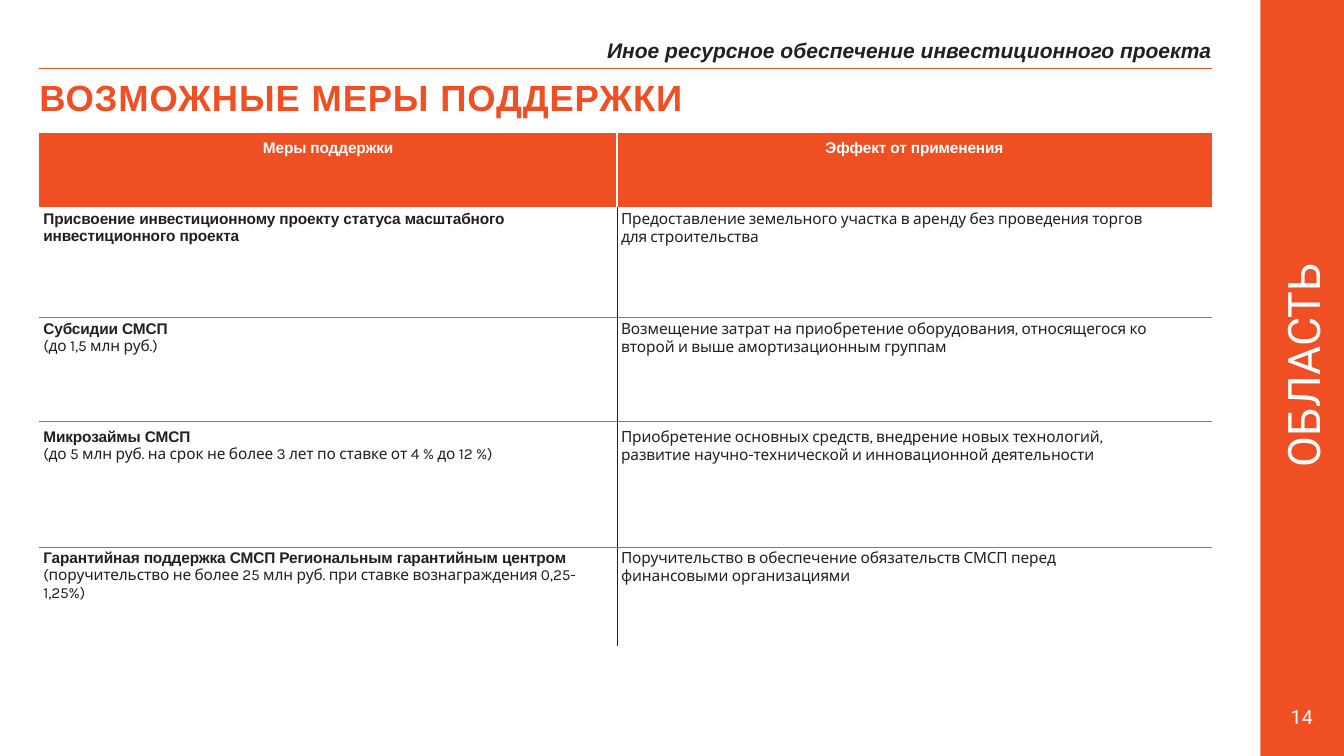
from dataclasses import dataclass

import pptx
import pptx.dml.color
import pptx.enum.shapes
import pptx.enum.text
import pptx.oxml
import pptx.oxml.ns
import pptx.util

# Content
TITLE = "ВОЗМОЖНЫЕ МЕРЫ ПОДДЕРЖКИ"
SECTION = "Иное ресурсное обеспечение инвестиционного проекта"
SIDE_LABEL = "ОБЛАСТЬ"
PAGE_NUMBER = "14"
HEADERS = ("Меры поддержки", "Эффект от применения")
# (measure, terms, effect)
MEASURES = [
    ("Присвоение инвестиционному проекту статуса масштабного инвестиционного проекта",
     "",
     "Предоставление земельного участка в аренду без проведения торгов для строительства"),
    ("Субсидии СМСП",
     "(до 1,5 млн руб.)",
     "Возмещение затрат на приобретение оборудования, относящегося ко второй и выше "
     "амортизационным группам"),
    ("Микрозаймы СМСП",
     "(до 5 млн руб. на срок не более 3 лет по ставке от 4 % до 12 %)",
     "Приобретение основных средств, внедрение новых технологий, развитие "
     "научно-технической и инновационной деятельности"),
    ("Гарантийная поддержка СМСП Региональным гарантийным центром",
     "(поручительство не более 25 млн руб. при ставке вознаграждения 0,25-1,25%)",
     "Поручительство в обеспечение обязательств СМСП перед финансовыми организациями"),
]


@dataclass(frozen=True)
class Theme:
    accent: str = "F04E23"
    ink: str = "231F20"
    white: str = "FFFFFF"
    heading_font: str = "Arial"
    body_font: str = "Karla"
    label_font: str = "Roboto"
    title_size: float = 26
    section_size: float = 15
    table_size: float = 11
    side_size: float = 32
    number_size: float = 14


THEME = Theme()

# Grid, in inches
SLIDE_WIDTH, SLIDE_HEIGHT = 13.33, 7.5
LEFT = 0.39
SIDEBAR_LEFT = 12.5
SIDEBAR_WIDTH = SLIDE_WIDTH - SIDEBAR_LEFT
RULE_TOP = 0.68
TABLE_TOP = 1.32
COLUMNS = (5.73, 5.9)
ROWS = (0.73, 1.1, 1.03, 1.25, 0.98)
TOP_INSETS = (0.06, 0.04, 0.03, 0.07, 0.02)
RIGHT = LEFT + sum(COLUMNS)
TEXT_INDENT = 0.04
EFFECT_RIGHT_INSET = 0.55

inches = pptx.util.Inches
ALIGN = pptx.enum.text.PP_ALIGN
ANCHOR = pptx.enum.text.MSO_ANCHOR


def color(value):
    return pptx.dml.color.RGBColor.from_string(value)


def add_run(paragraph, text, font, size, ink, bold=False, italic=False, spacing=0):
    run = paragraph.add_run()
    run.text = text
    run.font.name = font
    run.font.size = pptx.util.Pt(size)
    run.font.bold = bold
    run.font.italic = italic
    run.font.color.rgb = color(ink)
    if spacing:
        run.font._element.set("spc", str(round(spacing * 100)))


def prepare_frame(shape, inset=0.01, anchor=ANCHOR.TOP, align=ALIGN.LEFT):
    frame = shape.text_frame
    frame.word_wrap = True
    frame.auto_size = pptx.enum.text.MSO_AUTO_SIZE.NONE
    frame.margin_left = frame.margin_right = frame.margin_bottom = 0
    frame.margin_top = inches(inset)
    frame.vertical_anchor = anchor
    frame.paragraphs[0].alignment = align
    return frame.paragraphs[0]


def add_text_box(slide, left, top, width, height, **layout):
    box = slide.shapes.add_textbox(*map(inches, (left, top, width, height)))
    return box, prepare_frame(box, **layout)


def set_borders(cell, **sides):
    """Draw the named sides (L, R, T, B) as (colour, points); clear the others."""
    properties = cell._tc.get_or_add_tcPr()
    for side in "LRTB":
        ink, points = sides.get(side, (None, 0))
        fill = f'<a:solidFill><a:srgbClr val="{ink}"/></a:solidFill>' if ink else "<a:noFill/>"
        properties.append(pptx.oxml.parse_xml(
            f'<a:ln{side} {pptx.oxml.ns.nsdecls("a")} w="{int(pptx.util.Pt(points))}">'
            f"{fill}</a:ln{side}>"))


def fill_cell(cell, row, column, runs):
    """Write one paragraph for each (text, font, bold) entry."""
    header = row == 0
    cell.margin_left = inches(0 if header else TEXT_INDENT)
    cell.margin_right = inches(EFFECT_RIGHT_INSET if column and not header else 0)
    cell.margin_top = inches(TOP_INSETS[row])
    cell.margin_bottom = 0
    for index, (text, font, bold) in enumerate(runs):
        frame = cell.text_frame
        paragraph = frame.add_paragraph() if index else frame.paragraphs[0]
        paragraph.alignment = ALIGN.CENTER if header else ALIGN.LEFT
        add_run(paragraph, text, font, THEME.table_size,
                THEME.white if header else THEME.ink, bold, spacing=-0.1)

    sides = {"L" if column else "R": (THEME.white, 1) if header else (THEME.ink, 0.5)}
    if row > 1:
        sides["T"] = (THEME.accent, 1)
    if 0 < row < len(ROWS) - 1:
        sides["B"] = (THEME.accent, 1)
    set_borders(cell, **sides)
    if header:
        cell.fill.solid()
        cell.fill.fore_color.rgb = color(THEME.accent)
    else:
        cell.fill.background()


def add_sidebar(slide):
    bar = slide.shapes.add_shape(
        pptx.enum.shapes.MSO_SHAPE.RECTANGLE,
        *map(inches, (SIDEBAR_LEFT, 0, SIDEBAR_WIDTH, SLIDE_HEIGHT)))
    bar.shadow.inherit = False
    bar.fill.solid()
    bar.fill.fore_color.rgb = color(THEME.accent)
    bar.line.fill.background()

    # Label turned to read upwards
    length, center_x, center_y = 2.8, SIDEBAR_LEFT + SIDEBAR_WIDTH / 2, 3.62
    label, paragraph = add_text_box(
        slide, center_x - length / 2, center_y - SIDEBAR_WIDTH / 2, length, SIDEBAR_WIDTH,
        inset=0, anchor=ANCHOR.MIDDLE, align=ALIGN.CENTER)
    label.rotation = 270
    add_run(paragraph, SIDE_LABEL, THEME.label_font, THEME.side_size, THEME.white)

    number, paragraph = add_text_box(slide, 12.8, 6.97, 0.3, 0.3, inset=0.02)
    add_run(paragraph, PAGE_NUMBER, THEME.label_font, THEME.number_size, THEME.white,
            spacing=0.2)


def add_headings(slide):
    title = slide.shapes.title
    title.left, title.top, title.width, title.height = map(inches, (LEFT, 0.74, 6.6, 0.46))
    add_run(prepare_frame(title), TITLE, THEME.heading_font, THEME.title_size,
            THEME.accent, bold=True, spacing=0.6)

    section, paragraph = add_text_box(slide, RIGHT - 6.2, 0.36, 6.2, 0.28, align=ALIGN.RIGHT)
    add_run(paragraph, SECTION, THEME.heading_font, THEME.section_size, THEME.ink,
            bold=True, italic=True)

    rule = slide.shapes.add_connector(
        pptx.enum.shapes.MSO_CONNECTOR.STRAIGHT,
        *map(inches, (LEFT, RULE_TOP, RIGHT, RULE_TOP)))
    rule.line.color.rgb = color(THEME.accent)
    rule.line.width = pptx.util.Pt(0.5)
    rule._element.spPr.append(
        pptx.oxml.parse_xml(f'<a:effectLst {pptx.oxml.ns.nsdecls("a")}/>'))


def add_measures_table(slide):
    table = slide.shapes.add_table(
        len(ROWS), len(COLUMNS),
        *map(inches, (LEFT, TABLE_TOP, sum(COLUMNS), sum(ROWS)))).table
    table.horz_banding = False
    for column, width in enumerate(COLUMNS):
        table.columns[column].width = inches(width)
    for row, height in enumerate(ROWS):
        table.rows[row].height = inches(height)

    for column, text in enumerate(HEADERS):
        fill_cell(table.cell(0, column), 0, column, [(text, THEME.heading_font, True)])
    for row, (measure, terms, effect) in enumerate(MEASURES, start=1):
        runs = [(measure, THEME.heading_font, True)]
        if terms:
            runs.append((terms, THEME.body_font, False))
        fill_cell(table.cell(row, 0), row, 0, runs)
        fill_cell(table.cell(row, 1), row, 1, [(effect, THEME.body_font, False)])


def main():
    presentation = pptx.Presentation()
    presentation.slide_width = inches(SLIDE_WIDTH)
    presentation.slide_height = inches(SLIDE_HEIGHT)
    slide = presentation.slides.add_slide(presentation.slide_layouts[5])
    add_sidebar(slide)
    add_headings(slide)
    add_measures_table(slide)
    presentation.save("out.pptx")


if __name__ == "__main__":
    main()
